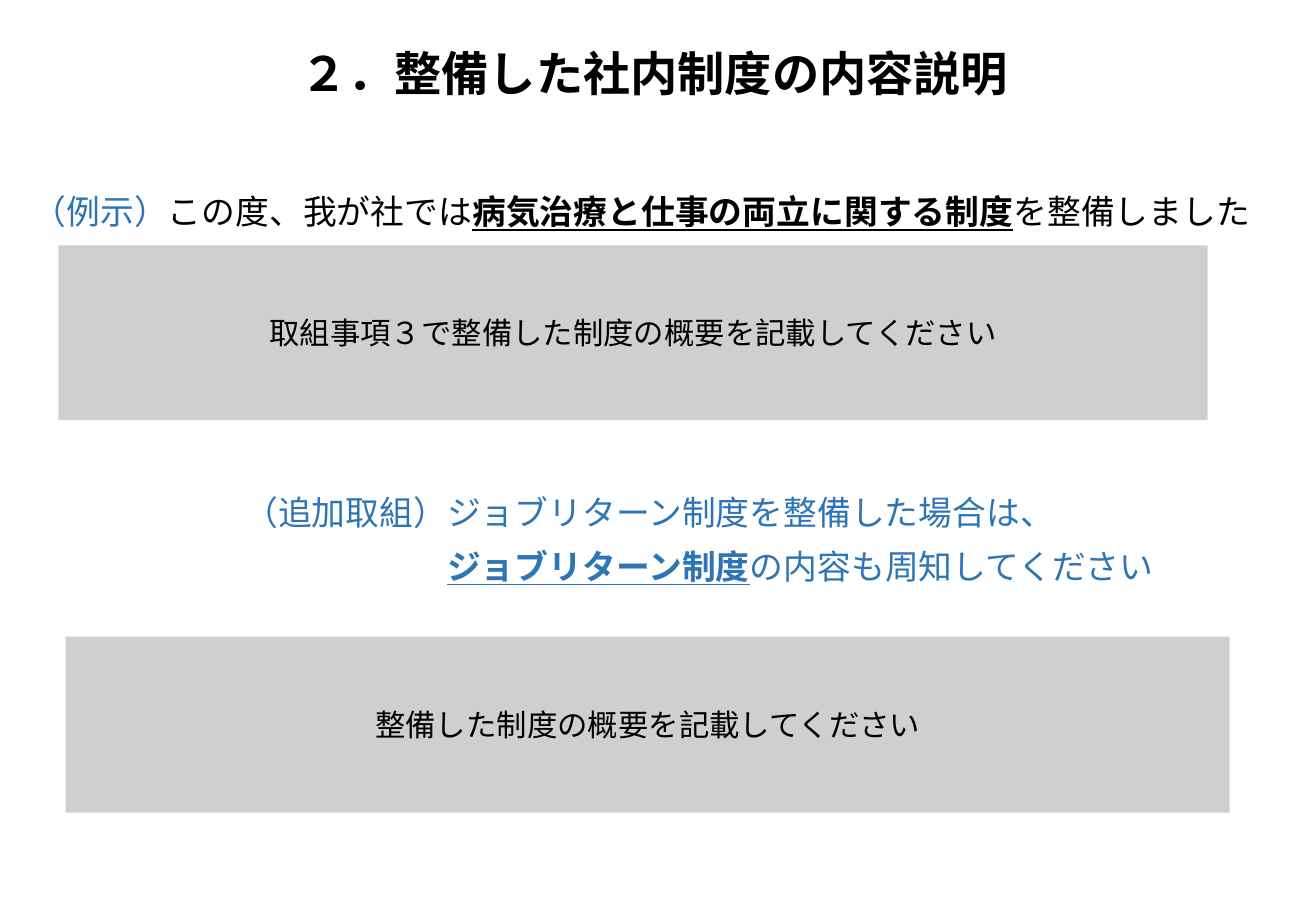
from dataclasses import dataclass

from pptx import Presentation
from pptx.dml.color import RGBColor
from pptx.enum.shapes import MSO_SHAPE
from pptx.enum.text import MSO_ANCHOR, MSO_AUTO_SIZE, PP_ALIGN
from pptx.oxml.xmlchemy import OxmlElement
from pptx.util import Pt

SCALE = 9144  # EMU per px, 100 px to the inch
COLOR = {"ink": "000000", "blue": "2E75B6", "gray": "D0CECE"}


@dataclass(frozen=True)
class Box:
    left: int
    top: int
    width: int
    height: int

    def emu(self) -> list[int]:
        return [n * SCALE for n in (self.left, self.top, self.width, self.height)]


@dataclass(frozen=True)
class Chunk:
    text: str
    color: str = "ink"
    mark: bool = False  # bold and underlined


@dataclass(frozen=True)
class Line:
    chunks: list[Chunk]
    indent: int = 0


@dataclass(frozen=True)
class Panel:
    box: Box
    text: str


TITLE = Box(237, 36, 609, 53)
INTRO = Box(17, 156, 1058, 41)
EXTRA = Box(191, 404, 778, 85)

INTRO_LINES = [
    Line([
        Chunk("（例示）", "blue"),
        Chunk("この度、我が社では"),
        Chunk("病気治療と仕事の両立に関する制度", mark=True),
        Chunk("を整備しました"),
    ]),
]
EXTRA_LINES = [
    Line([Chunk("（追加取組）ジョブリターン制度を整備した場合は、", "blue")]),
    Line([
        Chunk("ジョブリターン制度", "blue", True),
        Chunk("の内容も周知してください", "blue"),
    ], indent=167),
]
PANELS = [
    Panel(Box(48, 202, 946, 144), "取組事項３で整備した制度の概要を記載してください"),
    Panel(Box(54, 524, 958, 145), "整備した制度の概要を記載してください"),
]


def place(shape, box: Box) -> None:
    shape.left, shape.top, shape.width, shape.height = box.emu()


def add_run(para, chunk: Chunk, size: int, font: str, bold: bool = False) -> None:
    run = para.add_run()
    run.text = chunk.text
    run.font.name = font
    run.font.size = Pt(size)
    run.font.bold = bold or chunk.mark
    run.font.underline = chunk.mark
    run.font.color.rgb = RGBColor.from_string(COLOR[chunk.color])


def set_frame(frame, anchor: MSO_ANCHOR) -> None:
    frame.word_wrap = False
    frame.auto_size = MSO_AUTO_SIZE.SHAPE_TO_FIT_TEXT
    frame.vertical_anchor = anchor


def add_lines(frame, lines: list[Line], font: str) -> None:
    set_frame(frame, MSO_ANCHOR.TOP)
    for i, line in enumerate(lines):
        para = frame.add_paragraph() if i else frame.paragraphs[0]
        para.line_spacing = 0.9
        para.space_before = Pt(10)
        # Plain lines: no bullet, own left margin
        props = para._p.get_or_add_pPr()
        props.set("marL", str(line.indent * SCALE))
        props.set("indent", "0")
        props.append(OxmlElement("a:buNone"))
        for chunk in line.chunks:
            add_run(para, chunk, 20, font)


def add_title(shape, text: str) -> None:
    place(shape, TITLE)
    set_frame(shape.text_frame, MSO_ANCHOR.MIDDLE)
    para = shape.text_frame.paragraphs[0]
    para.alignment = PP_ALIGN.LEFT
    para.line_spacing = 0.9
    add_run(para, Chunk(text), 28, "Arial", bold=True)


def add_panel(slide, panel: Panel) -> None:
    shape = slide.shapes.add_shape(MSO_SHAPE.RECTANGLE, *panel.box.emu())
    shape.shadow.inherit = False
    shape.fill.solid()
    shape.fill.fore_color.rgb = RGBColor.from_string(COLOR["gray"])
    shape.line.fill.background()
    frame = shape.text_frame
    frame.word_wrap = True
    frame.vertical_anchor = MSO_ANCHOR.MIDDLE
    para = frame.paragraphs[0]
    para.alignment = PP_ALIGN.CENTER
    add_run(para, Chunk(panel.text), 18, "Calibri")


def main() -> None:
    deck = Presentation()
    deck.slide_width, deck.slide_height = 1083 * SCALE, 750 * SCALE
    slide = deck.slides.add_slide(deck.slide_layouts[1])

    # Title
    add_title(slide.shapes.title, "２．整備した社内制度の内容説明")

    # Intro line
    intro = slide.shapes.add_textbox(*INTRO.emu())
    add_lines(intro.text_frame, INTRO_LINES, "Arial")

    # Extra measure
    extra = slide.placeholders[1]
    place(extra, EXTRA)
    add_lines(extra.text_frame, EXTRA_LINES, "Calibri")

    # Gray panels to fill in
    for panel in PANELS:
        add_panel(slide, panel)

    deck.save("out.pptx")


if __name__ == "__main__":
    main()
